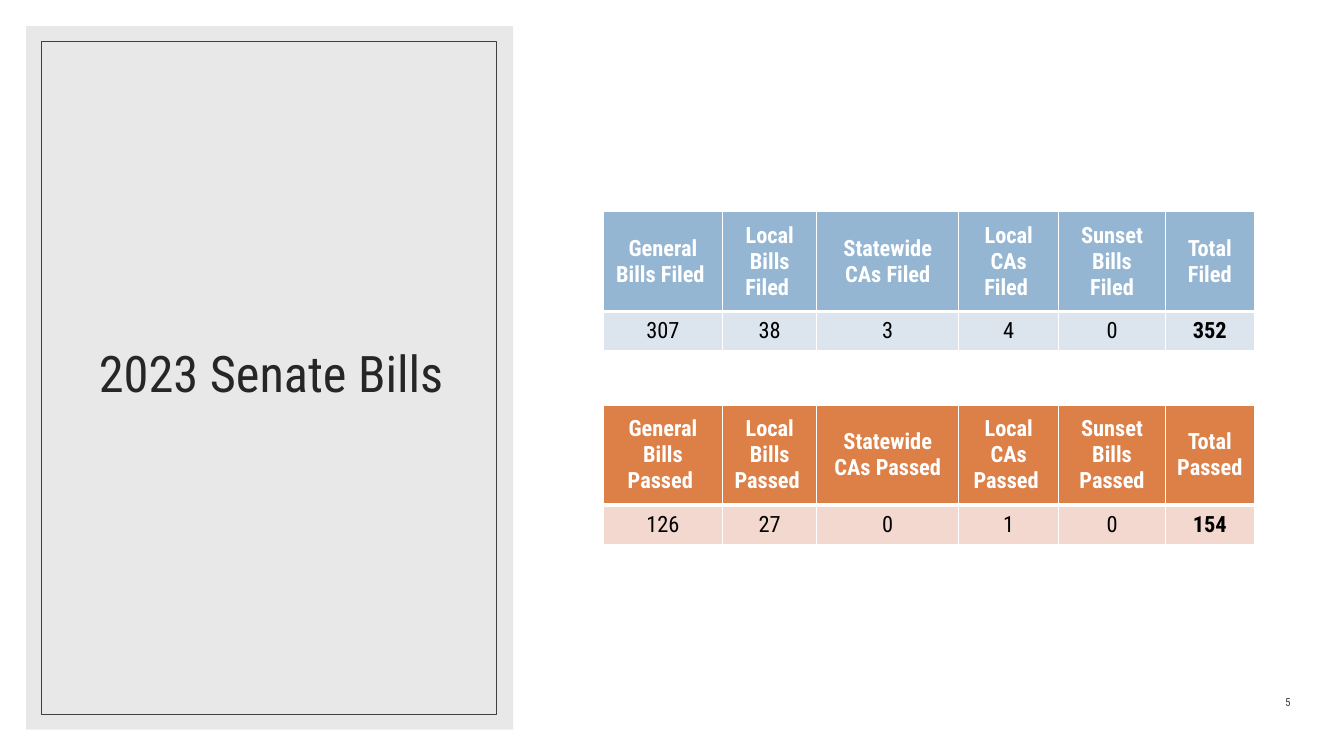
import pptx
import pptx.dml.color
import pptx.enum.shapes
import pptx.enum.text
import pptx.oxml
import pptx.oxml.ns
import pptx.util
from lxml import etree

Inches, Pt = pptx.util.Inches, pptx.util.Pt
PP_ALIGN, ANCHOR = pptx.enum.text.PP_ALIGN, pptx.enum.text.MSO_ANCHOR
RECTANGLE = pptx.enum.shapes.MSO_SHAPE.RECTANGLE
qn = pptx.oxml.ns.qn

# Content
TITLE = "2023 Senate Bills"
PAGE_NUMBER = "5"
# A line break inside a heading starts a new paragraph
BILL_TABLES = [
    {"top": 2.1, "head": "blue", "body": "pale_blue",
     "headings": ["General Bills Filed ", "Local Bills Filed ", "Statewide CAs Filed",
                  "Local CAs Filed ", "Sunset Bills\nFiled", "Total Filed"],
     "counts": [307, 38, 3, 4, 0, 352]},
    {"top": 4.02, "head": "orange", "body": "pale_orange",
     "headings": ["General Bills Passed ", "Local Bills Passed ", "Statewide CAs Passed",
                  "Local CAs Passed ", "Sunset Bills\nPassed", "Total Passed"],
     "counts": [126, 27, 0, 1, 0, 154]},
]

# Style
FONT = "Roboto Condensed"
COLOURS = {
    "white": "FFFFFF", "black": "000000", "panel": "D9D9D9",
    "title": "262626", "frame": "404040",
    "blue": "94B6D2", "pale_blue": "DCE5EE",
    "orange": "DD8047", "pale_orange": "F2D8CF",
}
TABLE_LEFT = 5.98
COLUMN_WIDTHS = [1.19, 0.93, 1.41, 0.99, 1.06, 0.88]
ROW_HEIGHTS = [0.99, 0.39]
THIN, THICK = 1, 3


def rgb(name):
    return pptx.dml.color.RGBColor.from_string(COLOURS[name])


def write(frame, text, size, colour, align=PP_ALIGN.CENTER, bold=False):
    for index, line in enumerate(text.split("\n")):
        paragraph = frame.add_paragraph() if index else frame.paragraphs[0]
        paragraph.alignment = align
        run = paragraph.add_run()
        run.text = line
        run.font.name, run.font.size, run.font.bold = FONT, Pt(size), bold
        run.font.color.rgb = rgb(colour)


def add_text(slide, box, text, size, colour, align, anchor):
    frame = slide.shapes.add_textbox(*map(Inches, box)).text_frame
    frame.word_wrap = True
    frame.vertical_anchor = anchor
    write(frame, text, size, colour, align)
    return frame.paragraphs[0]


def add_rectangle(slide, box):
    rectangle = slide.shapes.add_shape(RECTANGLE, *map(Inches, box))
    rectangle.shadow.inherit = False
    return rectangle


def set_borders(cell, top, bottom):
    properties = cell._tc.get_or_add_tcPr()
    sides = {"lnL": THIN, "lnR": THIN, "lnT": top, "lnB": bottom}
    for position, (side, width) in enumerate(sides.items()):
        line = etree.Element(qn(f"a:{side}"), w=str(Pt(width)))
        fill = etree.SubElement(line, qn("a:solidFill"))
        etree.SubElement(fill, qn("a:srgbClr"), val=COLOURS["white"])
        properties.insert(position, line)


def add_bill_table(slide, bills):
    rows = [bills["headings"], bills["counts"]]
    table = slide.shapes.add_table(
        len(rows), len(COLUMN_WIDTHS), Inches(TABLE_LEFT), Inches(bills["top"]),
        Inches(sum(COLUMN_WIDTHS)), Inches(sum(ROW_HEIGHTS))).table
    for column, width in zip(table.columns, COLUMN_WIDTHS):
        column.width = Inches(width)
    for r, (row, height) in enumerate(zip(rows, ROW_HEIGHTS)):
        table.rows[r].height = Inches(height)
        heading = r == 0
        for c, value in enumerate(row):
            cell = table.cell(r, c)
            cell.vertical_anchor = ANCHOR.MIDDLE
            cell.margin_left = cell.margin_right = Inches(0.09)
            cell.margin_top = cell.margin_bottom = Inches(0.04)
            cell.fill.solid()
            cell.fill.fore_color.rgb = rgb(bills["head" if heading else "body"])
            set_borders(cell, *((THIN, THICK) if heading else (THICK, THIN)))
            total = c == len(row) - 1
            write(cell.text_frame, str(value), 16,
                  "white" if heading else "black", bold=heading or total)


def main():
    deck = pptx.Presentation()
    deck.slide_width, deck.slide_height = Inches(13.33), Inches(7.5)
    slide = deck.slides.add_slide(deck.slide_layouts[6])
    slide.background.fill.solid()
    slide.background.fill.fore_color.rgb = rgb("white")

    # Title panel, 60% opaque
    panel = add_rectangle(slide, (0.26, 0.26, 4.83, 6.98))
    panel.fill.solid()
    panel.fill.fore_color.rgb = rgb("panel")
    panel.line.fill.background()
    panel_colour = panel._element.spPr.find(".//" + qn("a:srgbClr"))
    etree.SubElement(panel_colour, qn("a:alpha"), val="60000")

    # Title
    title = add_text(slide, (0.63, 0.61, 4.12, 6.24), TITLE, 36, "title",
                     PP_ALIGN.CENTER, ANCHOR.MIDDLE)
    title.line_spacing = 0.9

    # Thin frame inside the panel
    frame = add_rectangle(slide, (0.41, 0.41, 4.51, 6.68))
    frame.fill.background()
    frame.line.color.rgb = rgb("frame")
    frame.line.width = Pt(0.5)

    # Page number
    number = add_text(slide, (12, 6.78, 0.9, 0.3), PAGE_NUMBER, 8, "frame",
                      PP_ALIGN.RIGHT, ANCHOR.BOTTOM)
    number.space_after = Pt(6)

    # Filed and passed bills
    for bills in BILL_TABLES:
        add_bill_table(slide, bills)

    deck.save("out.pptx")


if __name__ == "__main__":
    main()
